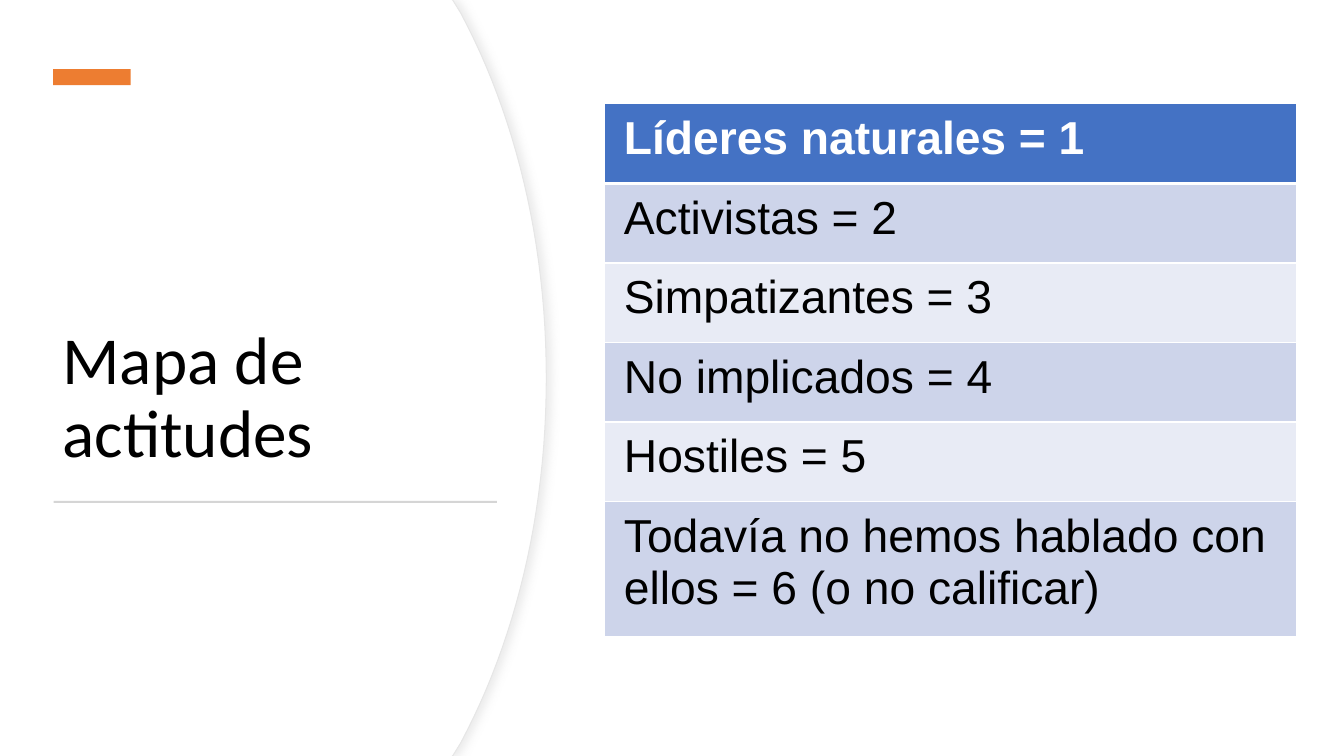
from lxml.etree import SubElement
from pptx import Presentation
from pptx.dml.color import RGBColor
from pptx.enum.shapes import MSO_SHAPE
from pptx.enum.text import MSO_ANCHOR, MSO_AUTO_SIZE, PP_ALIGN
from pptx.oxml.ns import qn
from pptx.util import Inches, Pt

WHITE = RGBColor(0xFF, 0xFF, 0xFF)
BLACK = RGBColor(0, 0, 0)
ORANGE = RGBColor(0xED, 0x7D, 0x31)
RULE_GRAY = RGBColor(0xD5, 0xD5, 0xD5)
EDGE_GRAY = RGBColor(0xE6, 0xE6, 0xE6)
SHADOW_GRAY = RGBColor(0xD8, 0xD8, 0xD8)
BLUE = RGBColor(0x44, 0x72, 0xC4)
BANDS = RGBColor(0xCD, 0xD4, 0xEA), RGBColor(0xE8, 0xEB, 0xF5)

ATTITUDES = [
    "Líderes naturales = 1",
    "Activistas = 2",
    "Simpatizantes = 3",
    "No implicados = 4",
    "Hostiles = 5",
    "Todavía no hemos hablado con ellos = 6 (o no calificar)",
]
ROW_HEIGHTS = [10.53] * 5 + [17.87]
ARC = [(34.28, 1.73), (38.33, 15.2), (40.65, 31.87), (40.65, 50)]
ARC_STEPS = 24


def bezier(points, t):
    """Return the point at t on a cubic curve."""
    weights = (1 - t) ** 3, 3 * t * (1 - t) ** 2, 3 * t**2 * (1 - t), t**3
    return tuple(sum(w * p[axis] for w, p in zip(weights, points)) for axis in (0, 1))


class AttitudeSlide:
    """Draws on one slide, with lengths in percent of its width and height."""

    def __init__(self, deck):
        """Add a title-only page to the deck."""
        self.deck = deck
        self.page = deck.slides.add_slide(deck.slide_layouts[5])
        self.shapes = self.page.shapes

    def x(self, percent):
        """Return a share of the slide's width."""
        return round(self.deck.slide_width * percent / 100)

    def y(self, percent):
        """Return a share of the slide's height."""
        return round(self.deck.slide_height * percent / 100)

    def frame(self, left, top, width, height):
        """Return a position and size."""
        return self.x(left), self.y(top), self.x(width), self.y(height)

    def paint(self, shape, color):
        """Give a shape a flat fill without line or shadow."""
        shape.shadow.inherit = False
        shape.fill.solid()
        shape.fill.fore_color.rgb = color
        shape.line.fill.background()

    def bar(self, color, left, top, width, height, rotation=0):
        """Draw a plain rectangle."""
        box = self.shapes.add_shape(MSO_SHAPE.RECTANGLE, *self.frame(left, top, width, height))
        box.rotation = rotation
        self.paint(box, color)

    def panel(self, inset=0):
        """Draw the white panel with its curved right edge."""
        upper = [bezier(ARC, step / ARC_STEPS) for step in range(ARC_STEPS + 1)]
        edge = [(33.68, 0)] + upper
        edge += [(across, 100 - down) for across, down in reversed(edge[:-1])]
        builder = self.shapes.build_freeform(0, 0)
        corners = [(self.x(across - inset), self.y(down)) for across, down in edge]
        builder.add_line_segments(corners + [(0, self.y(100))], close=True)
        panel = builder.convert_to_shape()
        self.paint(panel, WHITE)
        return panel

    def outline_and_shadow(self, panel):
        """Give the panel a thin edge and a soft shadow to the right."""
        panel.line.color.rgb = EDGE_GRAY
        panel.line.width = Pt(0.75)
        effects = panel.element.spPr.find(qn("a:effectLst"))
        shadow = SubElement(effects, qn("a:outerShdw"), blurRad=str(Pt(6)), dist=str(Pt(3)),
                            dir="0", algn="l", rotWithShape="0")
        color = SubElement(shadow, qn("a:srgbClr"), val=str(SHADOW_GRAY))
        SubElement(color, qn("a:alpha"), val="50000")

    def set_text(self, frame, text, size, font, color, bold=False):
        """Put one paragraph into a text frame."""
        frame.word_wrap = True
        para = frame.paragraphs[0]
        para.text = text
        para.alignment = PP_ALIGN.LEFT
        para.font.size, para.font.name = Pt(size), font
        para.font.bold, para.font.color.rgb = bold, color
        return para

    def title(self, text, left, top, width, height):
        """Fill the title and bring it in front of the panel."""
        title = self.shapes.title
        title.left, title.top, title.width, title.height = self.frame(left, top, width, height)
        frame = title.text_frame
        frame.auto_size = MSO_AUTO_SIZE.NONE
        frame.vertical_anchor = MSO_ANCHOR.BOTTOM
        self.set_text(frame, text, 48, "Calibri", BLACK).line_spacing = 0.9
        self.shapes.element.append(title.element)

    def borders(self, cell, top, bottom):
        """Draw white borders around a cell."""
        properties = cell._tc.get_or_add_tcPr()
        for side, width in zip("LRTB", (1, 1, top, bottom)):
            line = SubElement(properties, qn(f"a:ln{side}"), w=str(Pt(width)))
            fill = SubElement(line, qn("a:solidFill"))
            SubElement(fill, qn("a:srgbClr"), val=str(WHITE))

    def table(self, texts, heights, left, top, width):
        """Draw a one-column table with a header and banded rows."""
        place = self.frame(left, top, width, sum(heights))
        table = self.shapes.add_table(len(texts), 1, *place).table
        table.first_row = table.horz_banding = False
        for index, (text, height) in enumerate(zip(texts, heights)):
            header = index == 0
            table.rows[index].height = self.y(height)
            cell = table.cell(index, 0)
            cell.margin_left = cell.margin_right = Inches(0.19)
            cell.margin_top = cell.margin_bottom = Inches(0.09)
            self.borders(cell, 3 if index == 1 else 1, 3 if header else 1)
            cell.fill.solid()
            cell.fill.fore_color.rgb = BLUE if header else BANDS[(index - 1) % 2]
            self.set_text(cell.text_frame, text, 33, "Arial", WHITE if header else BLACK, header)


def main():
    """Build and save the deck."""
    deck = Presentation()
    deck.slide_width, deck.slide_height = Inches(13.33), Inches(7.5)
    slide = AttitudeSlide(deck)
    slide.outline_and_shadow(slide.panel())
    slide.panel(inset=0.08)
    slide.title("Mapa de actitudes", 3.9, 16.4, 33, 46.67)
    slide.bar(ORANGE, 6.23, 5.07, 1.2, 10.27, rotation=90)
    slide.bar(RULE_GRAY, 3.98, 66.27, 33, 0.27)
    slide.table(ATTITUDES, ROW_HEIGHTS, 45, 13.73, 51.46)
    deck.save("out.pptx")


if __name__ == "__main__":
    main()
